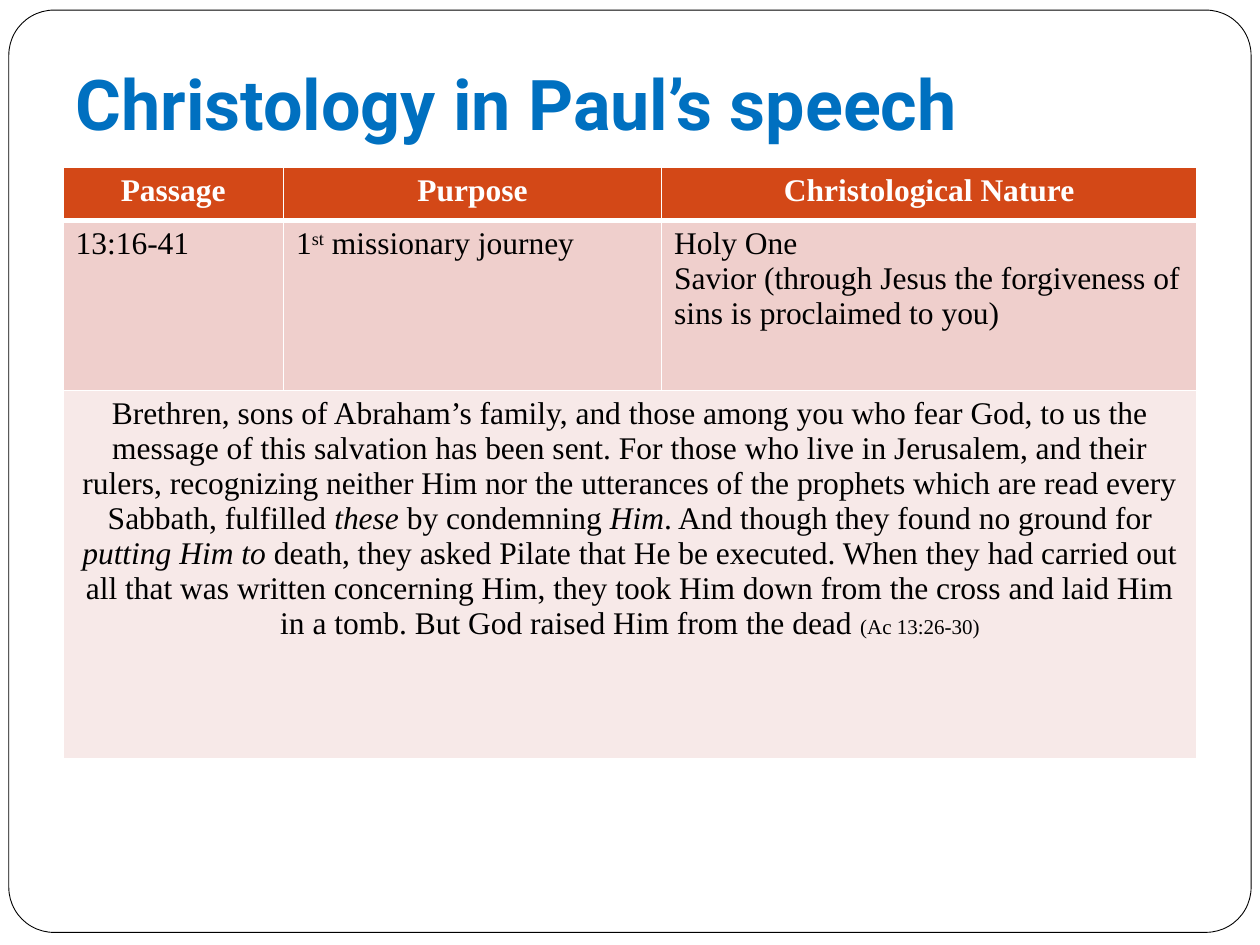
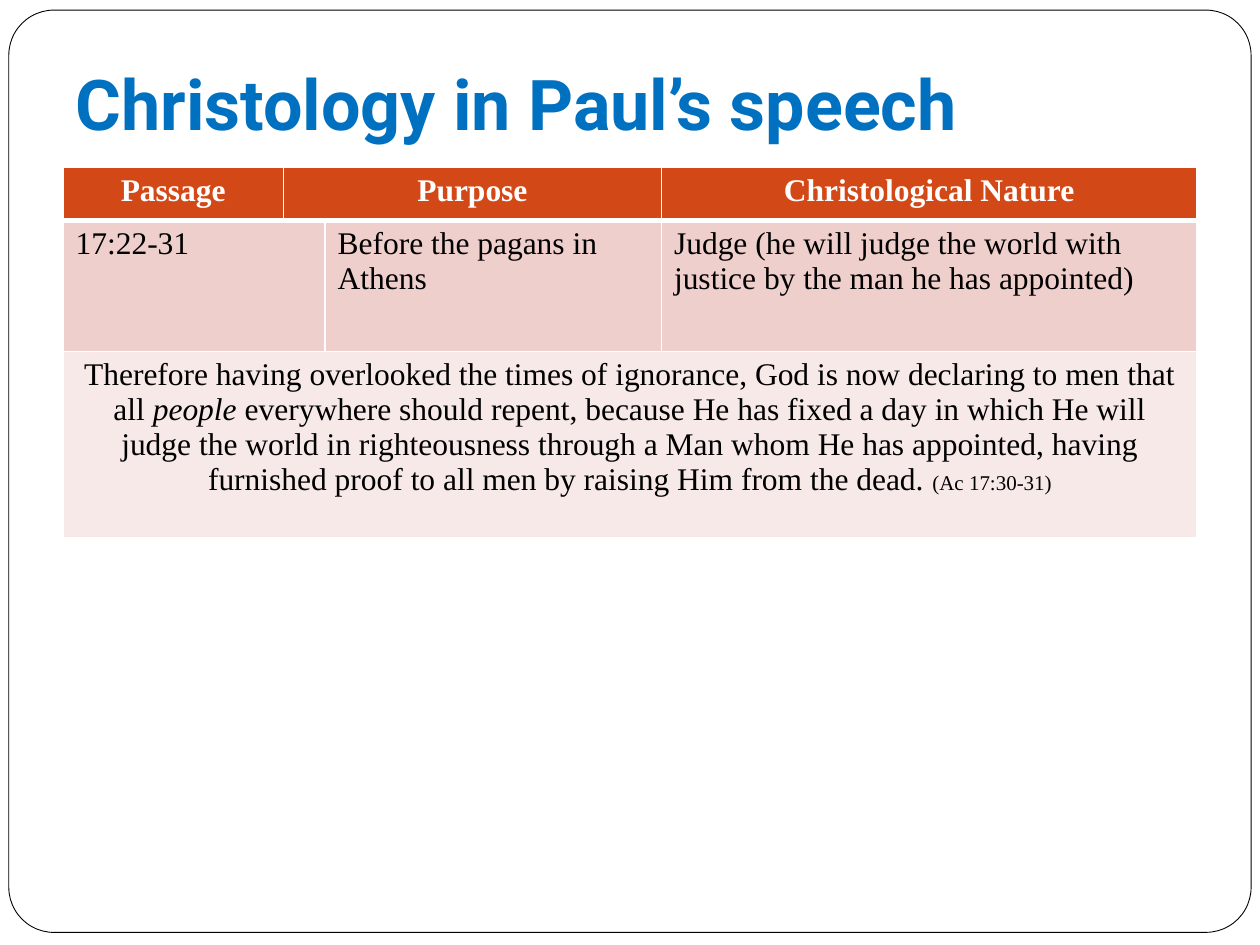
from lxml.etree import SubElement
from pptx import Presentation
from pptx.dml.color import RGBColor
from pptx.enum.shapes import MSO_SHAPE
from pptx.enum.text import MSO_ANCHOR, MSO_AUTO_SIZE, PP_ALIGN
from pptx.oxml.ns import qn
from pptx.util import Inches, Pt

WHITE, BLACK, BLUE = "FFFFFF", "000000", "0070C0"
ROW_FILLS = ["D34817", "EFCFCC", "F7E9E8"]
MARGIN, CONTENT_WIDTH, TABLE_TOP = 0.5, 9, 1.33
ITALIC, SUPERSCRIPT, REFERENCE = {"italic": True}, {"baseline": 30000}, {"size": 12}


def write(paragraph, text, size=18, font="Times New Roman", color=BLACK,
          bold=False, italic=False, baseline=None):
    run = paragraph.add_run()
    run.text = text
    run.font.size, run.font.name = Pt(size), font
    run.font.bold, run.font.italic = bold, italic
    run.font.color.rgb = RGBColor.from_string(color)
    if baseline:
        run.font._element.set("baseline", str(baseline))


def add_border(cell, side, width):
    """Draw one white cell edge; side is L, R, T or B, in that order."""
    properties = cell._tc.get_or_add_tcPr()
    line = SubElement(properties, qn(f"a:ln{side}"), w=str(Pt(width)))
    fill = SubElement(line, qn("a:solidFill"))
    SubElement(fill, qn("a:srgbClr"), val=WHITE)


# Each cell is (columns spanned, paragraphs); each paragraph is a list of (text, format).
speeches = [
    {
        "columns": [1.75, 3, 4.25],
        "heights": [0.42, 1.35, 2.92],
        "header_spans": [1, 1, 1],
        "summary": [
            (1, [[("13:16-41", {})]]),
            (1, [[("1", {}), ("st", SUPERSCRIPT), (" missionary journey", {})]]),
            (1, [[("Holy One", {})],
                 [("Savior (through Jesus the forgiveness of sins is proclaimed to you)", {})]]),
        ],
        "quotation": [
            ("Brethren, sons of Abraham’s family, and those among you who fear God, to us the "
             "message of this salvation has been sent. For those who live in Jerusalem, and their "
             "rulers, recognizing neither Him nor the utterances of the prophets which are read "
             "every Sabbath, fulfilled ", {}),
            ("these ", ITALIC),
            ("by condemning ", {}),
            ("Him", ITALIC),
            (". And though they found no ground for ", {}),
            ("putting Him to ", ITALIC),
            ("death, they asked Pilate that He be executed. When they had carried out all that was "
             "written concerning Him, they took Him down from the cross and laid Him in a tomb. "
             "But God raised Him from the dead ", {}),
            ("(Ac 13:26-30)", REFERENCE),
        ],
    },
    {
        "columns": [1.75, 0.33, 2.67, 4.25],
        "heights": [0.42, 1.04, 1.48],
        "header_spans": [1, 2, 1],
        "summary": [
            (2, [[("17:22-31", {})]]),
            (1, [[("Before the pagans in Athens", {})]]),
            (1, [[("Judge (he will judge the world with justice by the man he has appointed)",
                   {})]]),
        ],
        "quotation": [
            ("Therefore having overlooked the times of ignorance, God is now declaring to men "
             "that all ", {}),
            ("people", ITALIC),
            (" everywhere should repent, because He has fixed a day in which He will judge the "
             "world in righteousness through a Man whom He has appointed, having furnished proof "
             "to all men by raising Him from the dead. ", {}),
            ("(Ac 17:30-31)", REFERENCE),
        ],
    },
]
headings = ["Passage", "Purpose", "Christological Nature"]
heading_format = {"color": WHITE, "bold": True}

presentation = Presentation()
presentation.slide_width, presentation.slide_height = Inches(10), Inches(7.5)
layout = presentation.slide_layouts.get_by_name("Title Only")
layout_title = layout.placeholders[0]
layout_title.left, layout_title.top = Inches(MARGIN), Inches(0.3)
layout_title.width, layout_title.height = Inches(CONTENT_WIDTH), Inches(0.95)

for number, speech in enumerate(speeches):
    slide = presentation.slides.add_slide(layout)
    if number == 0:
        # The frame moves to the layout, so that every slide shows it.
        frame = slide.shapes.add_shape(MSO_SHAPE.ROUNDED_RECTANGLE, Inches(0.07), Inches(0.08),
                                       Inches(9.86), Inches(7.32))
        frame.adjustments[0] = 0.049
        frame.shadow.inherit = False
        frame.fill.solid()
        frame.fill.fore_color.rgb = RGBColor.from_string(WHITE)
        frame.line.color.rgb = RGBColor.from_string(BLACK)
        frame.line.width = Pt(0.5)
        layout.shapes.element.insert(2, frame.element)

    title = slide.shapes.title.text_frame
    title.auto_size = MSO_AUTO_SIZE.NONE
    title.vertical_anchor = MSO_ANCHOR.BOTTOM
    title.margin_bottom = Inches(0.1)
    title.paragraphs[0].alignment = PP_ALIGN.LEFT
    write(title.paragraphs[0], "Christology in Paul’s speech", size=40, font="Roboto",
          color=BLUE, bold=True)

    columns, heights = speech["columns"], speech["heights"]
    table = slide.shapes.add_table(len(heights), len(columns), Inches(MARGIN), Inches(TABLE_TOP),
                                   Inches(CONTENT_WIDTH), Inches(sum(heights))).table
    for column, width in zip(table.columns, columns):
        column.width = Inches(width)

    header = [(span, [[(heading, heading_format)]])
              for span, heading in zip(speech["header_spans"], headings)]
    quotation = [(len(columns), [speech["quotation"]])]
    rows = [header, speech["summary"], quotation]
    alignments = [PP_ALIGN.CENTER, PP_ALIGN.LEFT, PP_ALIGN.CENTER]

    for row_index, row in enumerate(rows):
        table.rows[row_index].height = Inches(heights[row_index])
        for cell in table.rows[row_index].cells:
            add_border(cell, "L", 1)
            add_border(cell, "R", 1)
            add_border(cell, "T", 3 if row_index == 1 else 1)
            add_border(cell, "B", 3 if row_index == 0 else 1)
            cell.fill.solid()
            cell.fill.fore_color.rgb = RGBColor.from_string(ROW_FILLS[row_index])

        column_index = 0
        for span, paragraphs in row:
            cell = table.cell(row_index, column_index)
            if span > 1:
                cell.merge(table.cell(row_index, column_index + span - 1))
            for index, runs in enumerate(paragraphs):
                text_frame = cell.text_frame
                paragraph = text_frame.add_paragraph() if index else text_frame.paragraphs[0]
                paragraph.alignment = alignments[row_index]
                for text, text_format in runs:
                    write(paragraph, text, **text_format)
            column_index += span

presentation.save("out.pptx")
